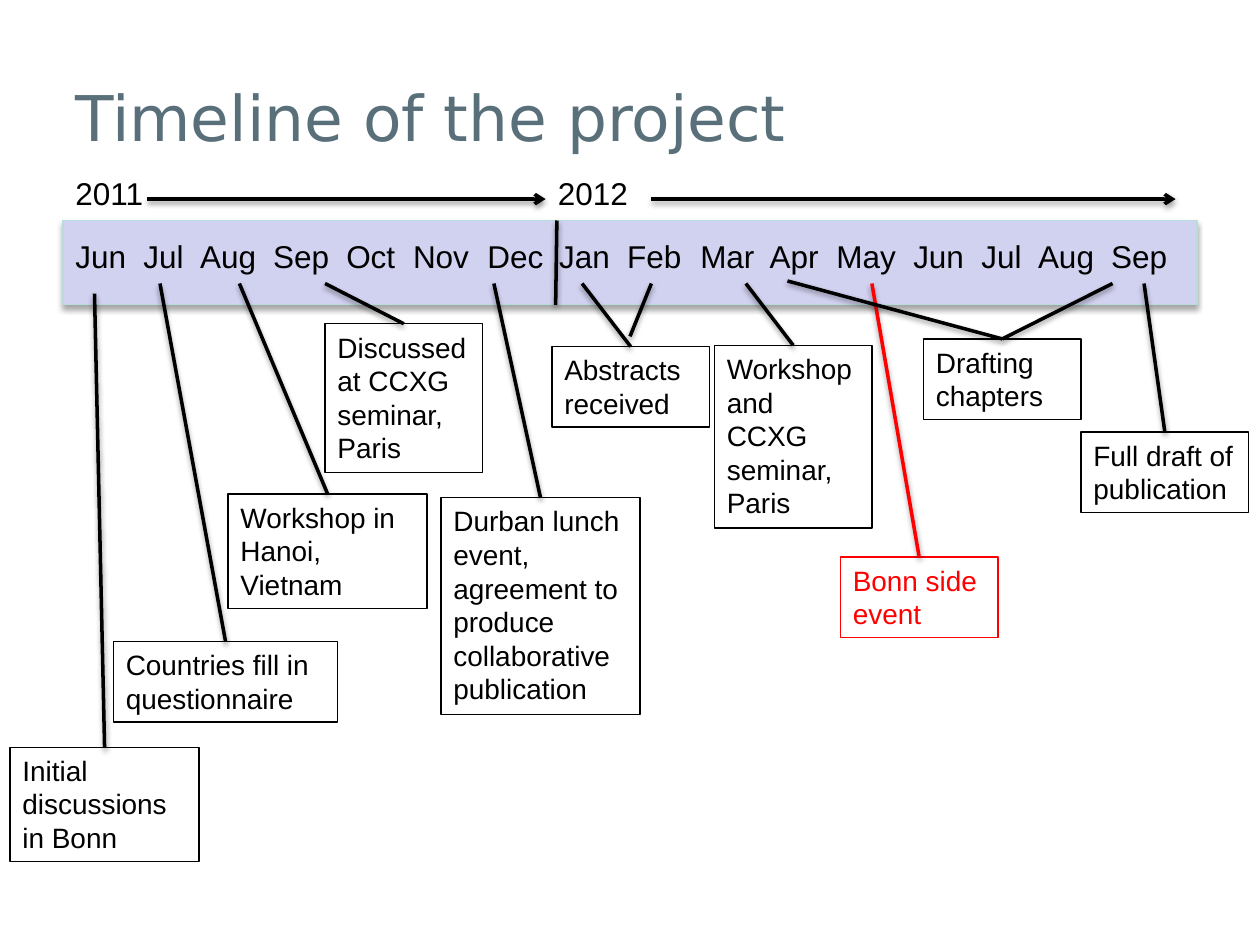
from lxml.etree import SubElement
from pptx import Presentation
from pptx.dml.color import RGBColor
from pptx.enum.shapes import MSO_CONNECTOR, MSO_SHAPE
from pptx.enum.text import MSO_ANCHOR, MSO_AUTO_SIZE, PP_ALIGN
from pptx.oxml.ns import qn
from pptx.util import Inches, Pt

BLACK = RGBColor(0x00, 0x00, 0x00)
RED = RGBColor(0xFF, 0x00, 0x00)
SLATE = RGBColor(0x59, 0x6F, 0x7A)
LAVENDER = RGBColor(0xD1, 0xD1, 0xF0)
PALE_TEAL = RGBColor(0xB6, 0xDC, 0xDF)

# Month label and its tab position inside the band
MONTHS = [("Jun", 0), ("Jul", 0.54), ("Aug", 0.99), ("Sep", 1.57), ("Oct", 2.15),
          ("Nov", 2.68), ("Dec", 3.27), ("Jan", 3.84), ("Feb", 4.38), ("Mar", 4.96),
          ("Apr", 5.51), ("May", 6.04), ("Jun", 6.65), ("Jul", 7.19), ("Aug", 7.64),
          ("Sep", 8.22)]
YEARS = [("2011", 0), ("2012", 3.83)]

# Wording, box (left, top, width, height), starts of the leader lines, colour
EVENTS = [
    ("Initial discussions in Bonn", (0.08, 5.93, 1.5, 0.91), [(0.75, 2.33)], BLACK),
    ("Countries fill in questionnaire", (0.9, 5.09, 1.78, 0.64), [(1.27, 2.25)], BLACK),
    ("Workshop in Hanoi, Vietnam", (1.81, 3.92, 1.58, 0.91), [(1.9, 2.25)], BLACK),
    ("Discussed at CCXG seminar, Paris", (2.58, 2.57, 1.25, 1.18), [(2.58, 2.25)], BLACK),
    ("Durban lunch event, agreement to produce collaborative publication",
     (3.5, 3.95, 1.58, 1.72), [(3.92, 2.25)], BLACK),
    ("Workshop and CCXG seminar, Paris", (5.67, 2.74, 1.25, 1.45), [(5.92, 2.25)], BLACK),
    ("Full draft of publication", (8.58, 3.43, 1.33, 0.64), [(9.08, 2.25)], BLACK),
    ("Abstracts received", (4.38, 2.75, 1.25, 0.64), [(4.62, 2.25)], BLACK),
    ("Bonn side event", (6.67, 4.42, 1.25, 0.64), [(6.92, 2.25)], RED),
    ("Drafting chapters", (7.33, 2.69, 1.25, 0.64), [(6.25, 2.23), (8.83, 2.25)], BLACK),
]


def inches(lengths):
    return [Inches(length) for length in lengths]


def add_shadow(part, distance, opacity):
    """Soft shadow straight below; call after the line is set."""
    effects = SubElement(part._element.spPr, qn("a:effectLst"))
    shadow = SubElement(effects, qn("a:outerShdw"), blurRad=str(Pt(3.1)),
                        dist=str(Pt(distance)), dir="5400000", rotWithShape="0")
    color = SubElement(shadow, qn("a:srgbClr"), val=str(BLACK))
    SubElement(color, qn("a:alpha"), val=str(opacity * 1000))


def add_line(slide, start, end, color=BLACK, arrow=False, target=None):
    line = slide.shapes.add_connector(MSO_CONNECTOR.STRAIGHT, *inches(start + end))
    if target is not None:
        line.end_connect(target, 0)
    line.line.color.rgb = color
    line.line.width = Pt(2)
    if arrow:
        SubElement(line.line._ln, qn("a:tailEnd"), type="arrow")
    add_shadow(line, 1.6, 38)


def format_text(paragraph, size, color, font="Arial"):
    paragraph.alignment = PP_ALIGN.LEFT
    for run in paragraph.runs:
        run.font.name = font
        run.font.size = Pt(size)
        run.font.color.rgb = color


def add_title(slide, box):
    title = slide.shapes.title
    title.left, title.top, title.width, title.height = inches(box)
    title.text_frame.text = "Timeline of the project"
    title.text_frame.vertical_anchor = MSO_ANCHOR.MIDDLE
    format_text(title.text_frame.paragraphs[0], 36, SLATE, "DejaVu Sans")


def add_tabbed_labels(slide, box, labels):
    frame = slide.shapes.add_textbox(*inches(box)).text_frame
    frame.word_wrap = True
    frame.auto_size = MSO_AUTO_SIZE.SHAPE_TO_FIT_TEXT
    paragraph = frame.paragraphs[0]
    paragraph.text = "\t".join(name for name, _ in labels)
    tabs = SubElement(paragraph._p.get_or_add_pPr(), qn("a:tabLst"))
    for _, position in labels[1:]:
        SubElement(tabs, qn("a:tab"), pos=str(Inches(position)), algn="l")
    format_text(paragraph, 18, BLACK)


def add_timeline(slide, box):
    left, top, width, height = box
    # Month band
    band = slide.shapes.add_shape(MSO_SHAPE.RECTANGLE, *inches(box))
    band.fill.solid()
    band.fill.fore_color.rgb = LAVENDER
    band.line.color.rgb = PALE_TEAL
    band.line.width = Pt(0.75)
    add_shadow(band, 1.8, 35)
    add_tabbed_labels(slide, (left, top + 0.08, width, 0.4), MONTHS)
    # Years with their arrows, and the divider between them
    add_tabbed_labels(slide, (left, top - 0.42, width, 0.4), YEARS)
    arrow_y = top - 0.17
    for start, end in [(0.67, 3.83), (4.67, 8.83)]:
        add_line(slide, (left + start, arrow_y), (left + end, arrow_y), arrow=True)
    add_line(slide, (left + 3.92, top), (left + 3.91, top + height))


def add_event(slide, wording, box, starts, color):
    event = slide.shapes.add_shape(MSO_SHAPE.RECTANGLE, *inches(box))
    event.shadow.inherit = False
    event.fill.background()
    event.line.color.rgb = color
    event.line.width = Pt(0.75)
    frame = event.text_frame
    frame.word_wrap = True
    frame.auto_size = MSO_AUTO_SIZE.SHAPE_TO_FIT_TEXT
    frame.vertical_anchor = MSO_ANCHOR.TOP
    frame.text = wording
    format_text(frame.paragraphs[0], 16, color)
    # Leader lines from the months to the top of the box
    left, top, width, _ = box
    for start in starts:
        add_line(slide, start, (left + width / 2, top), color, target=event)


def main():
    deck = Presentation()
    deck.slide_width, deck.slide_height = Inches(10), Inches(7.5)
    slide = deck.slides.add_slide(deck.slide_layouts[5])
    add_title(slide, (0.5, 0.3, 9, 1.25))
    add_timeline(slide, (0.5, 1.75, 9, 0.67))
    for event in EVENTS:
        add_event(slide, *event)
    # Second leader for the abstracts, stopping short of the box
    add_line(slide, (5.17, 2.25), (5, 2.67))
    deck.save("out.pptx")


if __name__ == "__main__":
    main()
